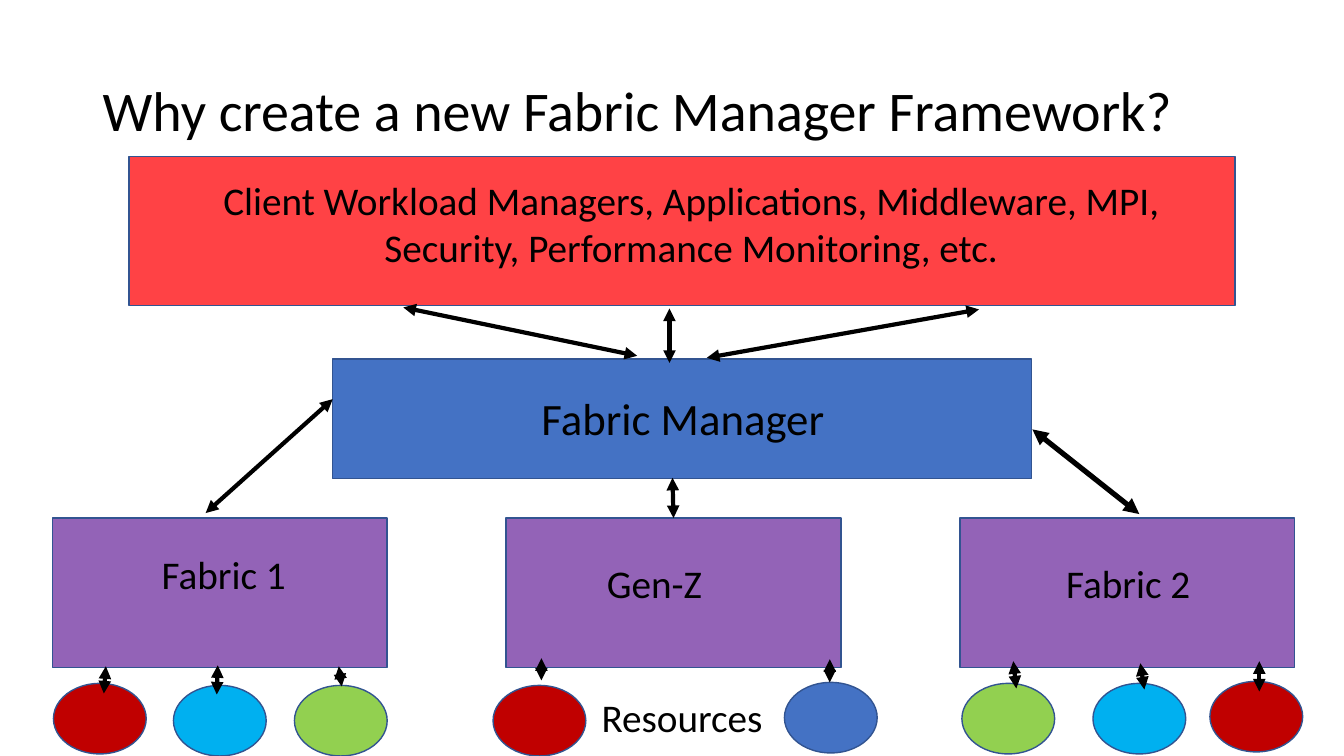
from lxml import etree
from pptx import Presentation
from pptx.dml.color import RGBColor
from pptx.enum.shapes import MSO_CONNECTOR, MSO_SHAPE
from pptx.enum.text import MSO_ANCHOR, PP_ALIGN
from pptx.oxml.ns import qn
from pptx.util import Inches, Pt

COLORS = {"black": "000000", "outline": "325491", "client": "FF0308", "blue": "4472C4",
          "purple": "7030A0", "red": "C00000", "cyan": "00B0F0", "green": "92D050"}
FONT = "Calibri"
SLIDE_W, SLIDE_H = 13.33, 7.5

TITLE = "Why create a new Fabric Manager Framework?"
CLIENTS = ("Client Workload Managers, Applications, Middleware, MPI, "
           "Security, Performance Monitoring, etc.")
MANAGER = "Fabric Manager"
RESOURCES = "Resources"

# Fabric row: name, left and top of its label
FABRICS = [("Fabric 1", 0.92, 5.41), ("Gen-Z", 5.19, 5.5), ("Fabric 2", 9.89, 5.5)]
FABRIC_LEFT, FABRIC_TOP, FABRIC_PITCH = 0.52, 5.14, 4.5
FABRIC_SIZE, LABEL_SIZE = (3.32, 1.48), (2.6, 0.57)

# Resource row: colour, left, top, and the arrow that ties it to its fabric
RESOURCE_SIZE = (0.92, 0.7)
RESOURCE_NODES = [
    ("red", 0.53, 6.78, (1.05, 6.61), (1.03, 6.88)),
    ("cyan", 1.72, 6.8, (2.16, 6.6), (2.15, 6.89)),
    ("green", 2.92, 6.8, (3.36, 6.61), (3.39, 6.81)),
    ("red", 4.89, 6.8, (5.37, 6.53), (5.37, 6.75)),
    ("blue", 7.78, 6.77, (8.23, 6.54), (8.23, 6.77)),
    ("green", 9.54, 6.78, (10.05, 6.56), (10.08, 6.83)),
    ("cyan", 10.84, 6.78, (11.31, 6.58), (11.35, 6.84)),
    ("red", 12, 6.76, (12.49, 6.56), (12.49, 6.86)),
]

# Arrows around the manager: start, end, width
MANAGER_ARROWS = [
    ((10.24, 4.26), (11.3, 5.1), 3.75),
    ((3.3, 3.96), (2.04, 5.09), 3),
    ((4, 3.05), (6.32, 3.53), 3),
    ((6.64, 3.06), (6.64, 3.6), 3),
    ((9.71, 3.07), (7.01, 3.55), 3),
]


def rgb(name):
    return RGBColor.from_string(COLORS[name])


def add_text(slide, text, box, size=28, align=PP_ALIGN.CENTER, anchor=MSO_ANCHOR.TOP, spacing=None):
    tf = slide.shapes.add_textbox(*map(Inches, box)).text_frame
    tf.word_wrap = True
    tf.vertical_anchor = anchor
    p = tf.paragraphs[0]
    p.alignment = align
    p.line_spacing = spacing
    r = p.add_run()
    r.text = text
    r.font.name, r.font.size = FONT, Pt(size)
    r.font.color.rgb = rgb("black")


def add_block(slide, kind, box, color, opacity=100):
    s = slide.shapes.add_shape(kind, *map(Inches, box))
    s.shadow.inherit = False
    s.fill.solid()
    s.fill.fore_color.rgb = rgb(color)
    if opacity < 100:
        fill = s._element.spPr.find(qn("a:solidFill"))
        etree.SubElement(fill[0], qn("a:alpha"), val=str(opacity * 1000))
    s.line.color.rgb = rgb("outline")
    s.line.width = Pt(1)
    return s


def add_arrow(slide, start, end, width=3):
    """Draw a straight arrow with a head at both ends."""
    c = slide.shapes.add_connector(MSO_CONNECTOR.STRAIGHT, *map(Inches, start + end))
    c.line.color.rgb = rgb("black")
    c.line.width = Pt(width)
    ln = c.line._get_or_add_ln()
    for tag in ("a:headEnd", "a:tailEnd"):
        etree.SubElement(ln, qn(tag), type="triangle")
    etree.SubElement(c._element.spPr, qn("a:effectLst"))
    return c


def main():
    prs = Presentation()
    prs.slide_width, prs.slide_height = Inches(SLIDE_W), Inches(SLIDE_H)
    slide = prs.slides.add_slide(prs.slide_layouts[6])
    rect, oval = MSO_SHAPE.RECTANGLE, MSO_SHAPE.OVAL

    add_text(slide, TITLE, (0.92, 0.4, 11.5, 1.45), size=40,
             align=PP_ALIGN.LEFT, anchor=MSO_ANCHOR.MIDDLE, spacing=0.9)
    add_block(slide, rect, (1.28, 1.55, 10.97, 1.48), "client", opacity=75)
    add_text(slide, CLIENTS, (1.45, 1.7, 10.81, 1.04))
    add_block(slide, rect, (3.3, 3.56, 6.93, 1.19), "blue")
    add_text(slide, MANAGER, (3.81, 3.83, 5.93, 0.64), size=32)

    fabrics = {}
    for i, (name, left, top) in enumerate(FABRICS):
        box = (FABRIC_LEFT + i * FABRIC_PITCH, FABRIC_TOP) + FABRIC_SIZE
        fabrics[name] = add_block(slide, rect, box, "purple", opacity=75)
        add_text(slide, name, (left, top) + LABEL_SIZE)

    for color, left, top, _, _ in RESOURCE_NODES:
        add_block(slide, oval, (left, top) + RESOURCE_SIZE, color)
    add_text(slide, RESOURCES, (0.55, 6.83, 12.43, 0.57))

    add_arrow(slide, (6.67, 4.74), (6.68, FABRIC_TOP)).end_connect(fabrics["Gen-Z"], 0)
    for start, end, width in MANAGER_ARROWS:
        add_arrow(slide, start, end, width)
    for _, _, _, start, end in RESOURCE_NODES:
        add_arrow(slide, start, end)

    prs.save("out.pptx")


if __name__ == "__main__":
    main()
